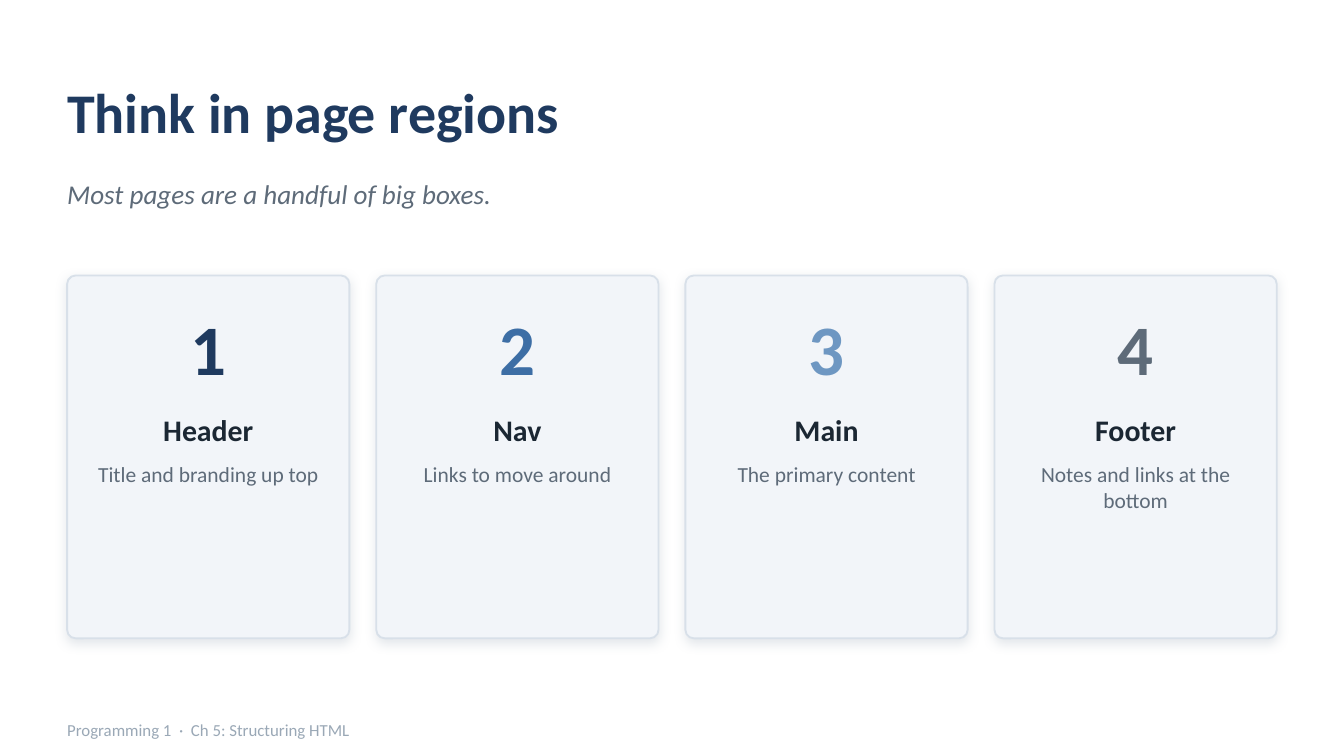
from lxml.etree import SubElement
from pptx import Presentation
from pptx.dml.color import RGBColor
from pptx.enum.shapes import MSO_SHAPE
from pptx.enum.text import MSO_ANCHOR, MSO_AUTO_SIZE, PP_ALIGN
from pptx.oxml.ns import qn
from pptx.util import Inches, Pt

COLORS = {
    "page": "FFFFFF",
    "navy": "1F3A5F",
    "blue": "3D6EA5",
    "sky": "6E97C2",
    "slate": "5E6B79",
    "ink": "1B2733",
    "mist": "9AA8B6",
    "card": "F2F5F9",
    "border": "D8E0E9",
}
REGIONS = [
    ("Header", "Title and branding up top", "navy"),
    ("Nav", "Links to move around", "blue"),
    ("Main", "The primary content", "sky"),
    ("Footer", "Notes and links at the bottom", "slate"),
]
PAGE_WIDTH = 10
PAGE_HEIGHT = PAGE_WIDTH * 9 / 16
MARGIN, CARD_TOP, CARD_WIDTH, CARD_HEIGHT, GAP = 0.5, 2.05, 2.1, 2.7, 0.2


def color(name):
    return RGBColor.from_string(COLORS[name])


def write(box, text, size, tone, font="Calibri", bold=False, italic=False,
          align=PP_ALIGN.LEFT, anchor=MSO_ANCHOR.MIDDLE):
    frame = box.text_frame
    frame.word_wrap = True
    frame.auto_size = MSO_AUTO_SIZE.NONE
    frame.vertical_anchor = anchor
    frame.margin_left = frame.margin_top = 0
    frame.margin_right = frame.margin_bottom = 0
    para = frame.paragraphs[0]
    para.alignment = align
    span = para.add_run()
    span.text = text
    span.font.name = font
    span.font.size = Pt(size)
    span.font.bold = bold
    span.font.italic = italic
    span.font.color.rgb = color(tone)


class RegionSlide:
    def __init__(self, deck):
        self.page = deck.slides.add_slide(deck.slide_layouts[5])
        self.page.background.fill.solid()
        self.page.background.fill.fore_color.rgb = color("page")

    def title(self, text, left, top, width, height, **style):
        box = self.page.shapes.title
        box.left, box.top = Inches(left), Inches(top)
        box.width, box.height = Inches(width), Inches(height)
        write(box, text, **style)

    def text(self, text, left, top, width, height, **style):
        box = self.page.shapes.add_textbox(
            Inches(left), Inches(top), Inches(width), Inches(height))
        write(box, text, **style)

    def panel(self, left, top, width, height):
        panel = self.page.shapes.add_shape(
            MSO_SHAPE.ROUNDED_RECTANGLE,
            Inches(left), Inches(top), Inches(width), Inches(height))
        panel.adjustments[0] = 0.03
        panel.fill.solid()
        panel.fill.fore_color.rgb = color("card")
        panel.line.color.rgb = color("border")
        panel.line.width = Pt(1)
        self.soft_shadow(panel)

    def soft_shadow(self, panel):
        panel.shadow.inherit = False
        effects = panel._element.spPr.find(qn("a:effectLst"))
        shadow = SubElement(
            effects, qn("a:outerShdw"), blurRad=str(Pt(6)), dist=str(Pt(2)),
            dir="5400000", algn="bl", rotWithShape="0")
        tint = SubElement(shadow, qn("a:srgbClr"), val=COLORS["mist"])
        SubElement(tint, qn("a:alpha"), val="28000")

    def card(self, number, name, note, tone):
        left = MARGIN + (number - 1) * (CARD_WIDTH + GAP)
        center = PP_ALIGN.CENTER
        self.panel(left, CARD_TOP, CARD_WIDTH, CARD_HEIGHT)
        self.text(str(number), left, CARD_TOP + 0.18, CARD_WIDTH, 0.7,
                  size=38, tone=tone, bold=True, align=center)
        self.text(name, left + 0.1, CARD_TOP + 0.95, CARD_WIDTH - 0.2, 0.4,
                  size=16, tone="ink", bold=True, align=center)
        self.text(note, left + 0.15, CARD_TOP + 1.38, CARD_WIDTH - 0.3, 1.1,
                  size=11.5, tone="slate", align=center, anchor=MSO_ANCHOR.TOP)


def main():
    deck = Presentation()
    deck.slide_width, deck.slide_height = Inches(PAGE_WIDTH), Inches(PAGE_HEIGHT)
    slide = RegionSlide(deck)
    slide.title("Think in page regions", MARGIN, 0.4, 9, 0.85,
                size=30, tone="navy", bold=True)
    slide.text("Most pages are a handful of big boxes.", MARGIN, 1.24, 9, 0.4,
               size=14.5, tone="slate", italic=True)
    for number, (name, note, tone) in enumerate(REGIONS, 1):
        slide.card(number, name, note, tone)
    slide.text("Programming 1  ·  Ch 5: Structuring HTML", MARGIN, 5.3, 8, 0.26,
               size=9, tone="mist")
    deck.save("out.pptx")


if __name__ == "__main__":
    main()
